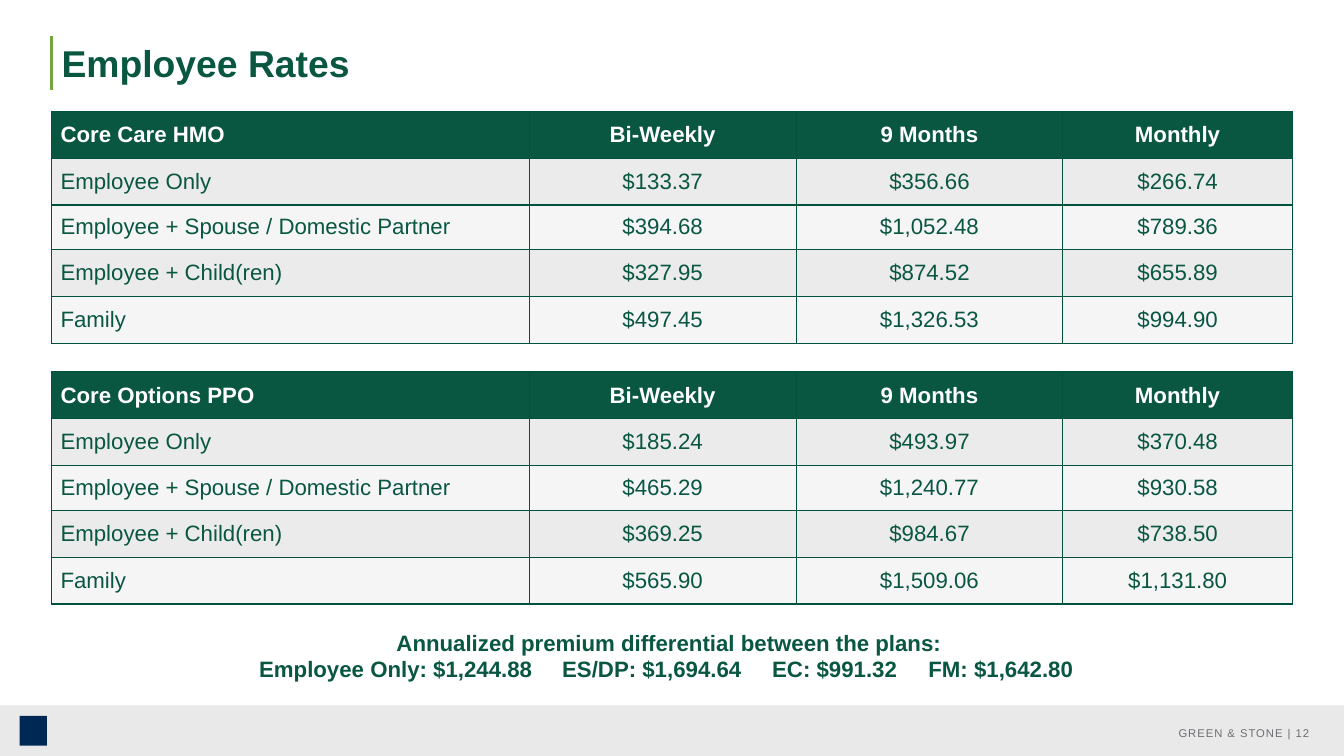
from dataclasses import dataclass

from lxml import etree
from pptx import Presentation
from pptx.dml.color import RGBColor
from pptx.enum.shapes import MSO_CONNECTOR, MSO_SHAPE
from pptx.enum.text import MSO_ANCHOR, PP_ALIGN
from pptx.oxml.ns import qn
from pptx.util import Pt

LEFT, CENTER, RIGHT = PP_ALIGN.LEFT, PP_ALIGN.CENTER, PP_ALIGN.RIGHT
TOP, MIDDLE = MSO_ANCHOR.TOP, MSO_ANCHOR.MIDDLE
RECTANGLE, STRAIGHT = MSO_SHAPE.RECTANGLE, MSO_CONNECTOR.STRAIGHT


@dataclass(frozen=True)
class Theme:
    """Colours, font and type sizes of the slide."""
    font: str = "Arial"
    green: str = "095641"
    border: str = "00523E"
    accent: str = "73A641"
    white: str = "FFFFFF"
    bands: tuple = ("EBEBEC", "F5F5F6")
    footer: str = "E9E9EA"
    footer_text: str = "6D6E71"
    logo: str = "002855"
    title_size: float = 30.2
    body_size: float = 18
    footer_size: float = 9.1


THEME = Theme()
WIDTH, HEIGHT = 1088, 612
MARGIN = 41.8
TABLE_WIDTH, TABLE_HEIGHT = 1004.4, 188
COLUMN_WIDTHS = (386.6, 216, 216, 185.8)
ROW_HEIGHTS = (38, 38, 36, 38, 38)
PERIODS = ("Bi-Weekly", "9 Months", "Monthly")
TIERS = ("Employee Only", "Employee + Spouse / Domestic Partner",
         "Employee + Child(ren)", "Family")
PLANS = {
    "Core Care HMO": (("$133.37", "$356.66", "$266.74"),
                      ("$394.68", "$1,052.48", "$789.36"),
                      ("$327.95", "$874.52", "$655.89"),
                      ("$497.45", "$1,326.53", "$994.90")),
    "Core Options PPO": (("$185.24", "$493.97", "$370.48"),
                         ("$465.29", "$1,240.77", "$930.58"),
                         ("$369.25", "$984.67", "$738.50"),
                         ("$565.90", "$1,509.06", "$1,131.80")),
}
DIFFERENTIALS = ("Employee Only: $1,244.88", "ES/DP: $1,694.64",
                 "EC: $991.32", "FM: $1,642.80")
DIFFERENTIAL_STOPS = (186.7, 432, 602, 728.5)


def color(value):
    """Turn a hex string into a colour."""
    return RGBColor.from_string(value)


def format_paragraph(paragraph, size, ink, bold=False, alignment=LEFT):
    """Align a paragraph and format its runs."""
    paragraph.alignment = alignment
    for run in paragraph.runs:
        run.font.name = THEME.font
        run.font.size = Pt(size)
        run.font.bold = bold
        run.font.color.rgb = color(ink)


def add_text(slide, box, text, anchor, inset=(7.2, 3.6)):
    """Add a wrapping text box and return its text frame."""
    frame = slide.shapes.add_textbox(*map(Pt, box)).text_frame
    frame.word_wrap = True
    frame.vertical_anchor = anchor
    frame.margin_left = frame.margin_right = Pt(inset[0])
    frame.margin_top = frame.margin_bottom = Pt(inset[1])
    frame.text = text
    return frame


def add_block(slide, box, fill):
    """Add a plain filled rectangle."""
    shape = slide.shapes.add_shape(RECTANGLE, *map(Pt, box))
    shape.shadow.inherit = False
    shape.fill.solid()
    shape.fill.fore_color.rgb = color(fill)
    shape.line.fill.background()


def add_title(slide, box, text):
    """Add the title with its accent rule at the left edge of the box."""
    left, top, width, height = box
    rule = slide.shapes.add_connector(
        STRAIGHT, Pt(left), Pt(top), Pt(left), Pt(top + height))
    rule.line.color.rgb = color(THEME.accent)
    rule.line.width = Pt(2)
    etree.SubElement(rule._element.spPr, qn("a:effectLst"))
    frame = add_text(slide, (left + 8, top + 4, width - 8, height - 8), text, MIDDLE, (0, 0))
    format_paragraph(frame.paragraphs[0], THEME.title_size, THEME.green, True)


def add_borders(cell):
    """Draw a thin line on all four sides of a cell."""
    properties = cell._tc.get_or_add_tcPr()
    for side in ("a:lnL", "a:lnR", "a:lnT", "a:lnB"):
        line = etree.SubElement(properties, qn(side), w=str(Pt(1)))
        fill = etree.SubElement(line, qn("a:solidFill"))
        etree.SubElement(fill, qn("a:srgbClr"), val=THEME.border)


def add_rate_table(slide, box, plan, rates):
    """Add the rate table of one plan."""
    rows = [(plan, *PERIODS)] + [(tier, *values) for tier, values in zip(TIERS, rates)]
    table = slide.shapes.add_table(len(rows), len(COLUMN_WIDTHS), *map(Pt, box)).table
    table.first_row = table.horz_banding = False
    for column, width in zip(table.columns, COLUMN_WIDTHS):
        column.width = Pt(width)
    for index, values in enumerate(rows):
        header = index == 0
        table.rows[index].height = Pt(ROW_HEIGHTS[index])
        for position, value in enumerate(values):
            cell = table.cell(index, position)
            add_borders(cell)
            cell.fill.solid()
            cell.fill.fore_color.rgb = color(
                THEME.green if header else THEME.bands[(index - 1) % 2])
            cell.vertical_anchor = MIDDLE
            cell.text_frame.text = value
            format_paragraph(cell.text_frame.paragraphs[0], THEME.body_size,
                             THEME.white if header else THEME.green, header,
                             CENTER if position else LEFT)


def add_differential(slide, box):
    """Add the premium differential, its figures set on tab stops."""
    frame = add_text(slide, box, "Annualized premium differential between the plans:", TOP)
    figures = frame.add_paragraph()
    stops = etree.SubElement(figures._p.get_or_add_pPr(), qn("a:tabLst"))
    for stop in DIFFERENTIAL_STOPS:
        etree.SubElement(stops, qn("a:tab"), pos=str(Pt(stop)), algn="l")
    figures.text = "".join(f"\t{figure}" for figure in DIFFERENTIALS)
    for paragraph, alignment in zip(frame.paragraphs, (CENTER, LEFT)):
        format_paragraph(paragraph, THEME.body_size, THEME.green, True, alignment)


def add_footer(slide, box, text):
    """Add the footer band with its emblem block and page label."""
    left, top, width, height = box
    add_block(slide, box, THEME.footer)
    add_block(slide, (left + 16, top + 8.6, 22, 24), THEME.logo)
    frame = add_text(slide, (left + width - 266, top + 9.3, 245, 26), text, MIDDLE)
    format_paragraph(frame.paragraphs[0], THEME.footer_size, THEME.footer_text,
                     alignment=RIGHT)
    for run in frame.paragraphs[0].runs:
        run._r.get_or_add_rPr().set("spc", "80")


def main():
    """Build the employee rates slide."""
    presentation = Presentation()
    presentation.slide_width, presentation.slide_height = Pt(WIDTH), Pt(HEIGHT)
    slide = presentation.slides.add_slide(presentation.slide_layouts[6])
    add_footer(slide, (0, 571, WIDTH, HEIGHT - 571), "GREEN & STONE | 12")
    add_title(slide, (MARGIN, 29, TABLE_WIDTH, 44), "Employee Rates")
    for index, (plan, rates) in enumerate(PLANS.items()):
        add_rate_table(slide, (MARGIN, 90 + 211 * index, TABLE_WIDTH, TABLE_HEIGHT), plan, rates)
    add_differential(slide, (16, 505.5, 1051, 51))
    presentation.save("out.pptx")


if __name__ == "__main__":
    main()
